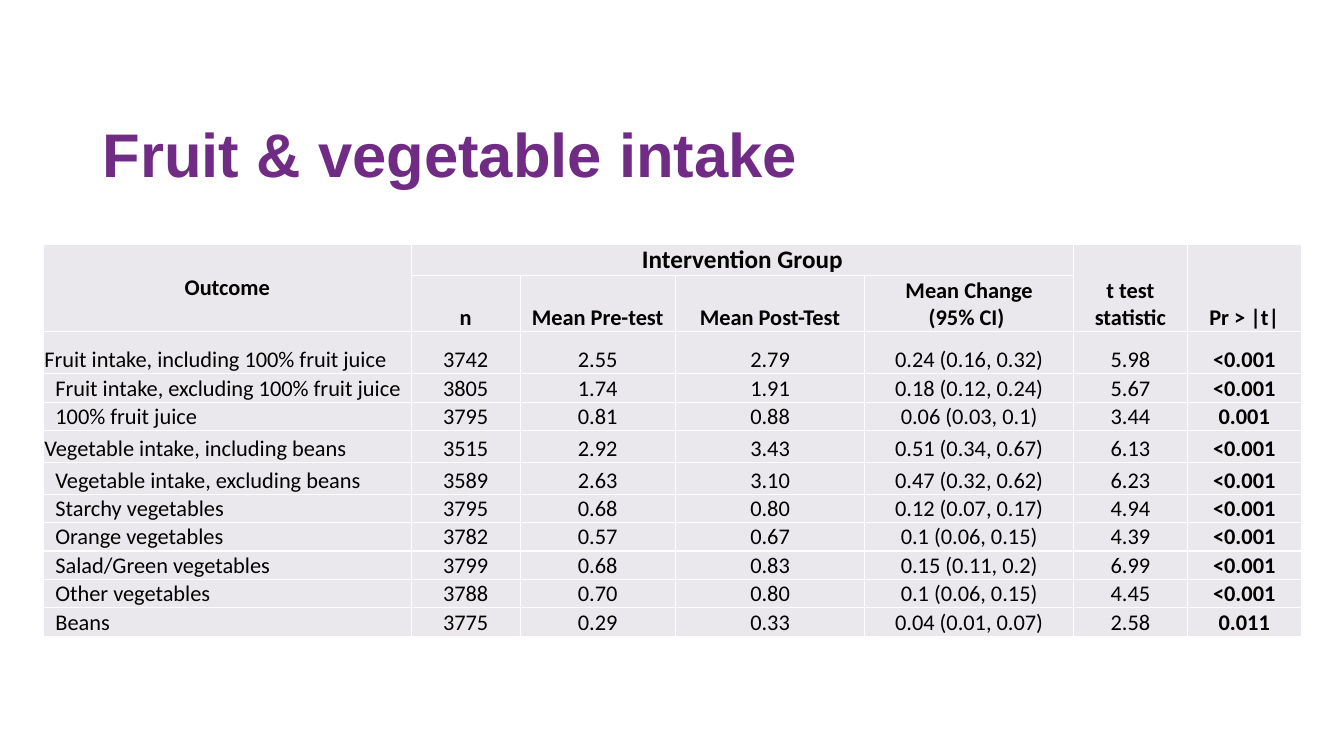
from dataclasses import dataclass

from lxml.etree import SubElement
from pptx import Presentation
from pptx.dml.color import RGBColor as Rgb
from pptx.enum.text import MSO_ANCHOR as Anchor, MSO_AUTO_SIZE as AutoSize, PP_ALIGN as Align
from pptx.oxml.ns import qn
from pptx.util import Pt


@dataclass(frozen=True)
class Theme:
    heading: str = "702B84"
    ink: str = "000000"
    cell: str = "EBE8ED"
    border: str = "FFFFFF"
    heading_font: str = "Arial"
    table_font: str = "Calibri"
    heading_size: float = 44
    group_size: float = 18
    table_size: float = 16
    border_width: float = 1


HEADERS = {
    (0, 0): "Outcome",
    (0, 1): "Intervention Group",
    (0, 5): "t test statistic",
    (0, 6): "Pr > |t|",
    (1, 1): "n",
    (1, 2): "Mean Pre-test",
    (1, 3): "Mean Post-Test",
    (1, 4): "Mean Change\v(95% CI) ",
}
MERGES = [((0, 0), (1, 0)), ((0, 1), (0, 4)), ((0, 5), (1, 5)), ((0, 6), (1, 6))]
OUTCOMES = [
    ("Fruit intake, including 100% fruit juice", "3742", "2.55", "2.79", "0.24 (0.16, 0.32)", "5.98", "<0.001"),
    ("Fruit intake, excluding 100% fruit juice", "3805", "1.74", "1.91", "0.18 (0.12, 0.24)", "5.67", "<0.001"),
    ("100% fruit juice", "3795", "0.81", "0.88", "0.06 (0.03, 0.1)", "3.44", "0.001"),
    ("Vegetable intake, including beans", "3515", "2.92", "3.43", "0.51 (0.34, 0.67)", "6.13", "<0.001"),
    ("Vegetable intake, excluding beans", "3589", "2.63", "3.10", "0.47 (0.32, 0.62)", "6.23", "<0.001"),
    ("Starchy vegetables", "3795", "0.68", "0.80", "0.12 (0.07, 0.17)", "4.94", "<0.001"),
    ("Orange vegetables", "3782", "0.57", "0.67", "0.1 (0.06, 0.15)", "4.39", "<0.001"),
    ("Salad/Green vegetables", "3799", "0.68", "0.83", "0.15 (0.11, 0.2)", "6.99", "<0.001"),
    ("Other vegetables", "3788", "0.70", "0.80", "0.1 (0.06, 0.15)", "4.45", "<0.001"),
    ("Beans", "3775", "0.29", "0.33", "0.04 (0.01, 0.07)", "2.58", "0.011"),
]
COLUMN_WIDTHS = [262.8, 77.76, 110.88, 135.36, 149.04, 81.36, 81.36]
ROW_HEIGHTS = [14.4, 30.24, 30.24, 15.84, 15.12, 23.04, 22.32, 16.56] + [15.12] * 4
INSET, INDENT = 0.72, 8.64


def write(frame, text, *, font, size, color, bold=False, align=Align.LEFT, spacing=None):
    paragraph = frame.paragraphs[0]
    paragraph.text = text
    paragraph.alignment = align
    if spacing:
        paragraph.line_spacing = spacing
    for run in paragraph.runs:
        run.font.name = font
        run.font.size = Pt(size)
        run.font.bold = bold
        run.font.color.rgb = Rgb.from_string(color)


class SlideBuilder:
    def __init__(self, slide, theme):
        self.slide = slide
        self.theme = theme

    def title(self, text, left, top, width, height):
        heading = self.slide.shapes.title
        heading.left, heading.top = Pt(left), Pt(top)
        heading.width, heading.height = Pt(width), Pt(height)
        frame = heading.text_frame
        frame.auto_size = AutoSize.NONE
        frame.word_wrap = True
        frame.vertical_anchor = Anchor.MIDDLE
        write(frame, text, font=self.theme.heading_font, size=self.theme.heading_size,
              color=self.theme.heading, bold=True, spacing=0.9)

    def table(self, left, top, widths, heights, frame_height):
        holder = self.slide.shapes.add_table(
            len(heights), len(widths), Pt(left), Pt(top), Pt(sum(widths)), Pt(frame_height))
        table = holder.table
        table.first_row = table.horz_banding = False
        for column, width in zip(table.columns, widths):
            column.width = Pt(width)
        for row, height in zip(table.rows, heights):
            row.height = Pt(height)
        holder.height = Pt(frame_height)
        for cell in table.iter_cells():
            self.style_cell(cell)
        return table

    def style_cell(self, cell):
        properties = cell._tc.get_or_add_tcPr()
        for side in ("L", "R", "T", "B"):
            edge = SubElement(properties, qn(f"a:ln{side}"), w=str(Pt(self.theme.border_width)))
            paint = SubElement(edge, qn("a:solidFill"))
            SubElement(paint, qn("a:srgbClr"), val=self.theme.border)
        cell.fill.solid()
        cell.fill.fore_color.rgb = Rgb.from_string(self.theme.cell)
        cell.margin_left = cell.margin_right = cell.margin_top = Pt(INSET)
        cell.margin_bottom = 0
        cell.vertical_anchor = Anchor.BOTTOM

    def cell_text(self, cell, text, *, size=None, bold=False, align=Align.CENTER):
        write(cell.text_frame, text, font=self.theme.table_font, size=size or self.theme.table_size,
              color=self.theme.ink, bold=bold, align=align)


def main():
    deck = Presentation()
    deck.slide_width, deck.slide_height = Pt(960), Pt(540)
    theme = Theme()
    builder = SlideBuilder(deck.slides.add_slide(deck.slide_layouts[5]), theme)
    builder.title("Fruit & vegetable intake", 66.24, 60.48, 828, 104.4)

    intake = builder.table(30.96, 174.24, COLUMN_WIDTHS, ROW_HEIGHTS, 274.32)
    for first, last in MERGES:
        intake.cell(*first).merge(intake.cell(*last))
    for position, label in HEADERS.items():
        size = theme.group_size if position == (0, 1) else theme.table_size
        builder.cell_text(intake.cell(*position), label, size=size, bold=True)
    intake.cell(0, 0).vertical_anchor = Anchor.MIDDLE

    for row, (outcome, *results, p_value) in enumerate(OUTCOMES, start=2):
        name_cell = intake.cell(row, 0)
        builder.cell_text(name_cell, outcome, align=Align.LEFT)
        if "including" not in outcome:
            name_cell.margin_left = Pt(INDENT)
        for column, result in enumerate(results, start=1):
            builder.cell_text(intake.cell(row, column), result)
        builder.cell_text(intake.cell(row, len(COLUMN_WIDTHS) - 1), p_value, bold=True)

    deck.save("out.pptx")


if __name__ == "__main__":
    main()
